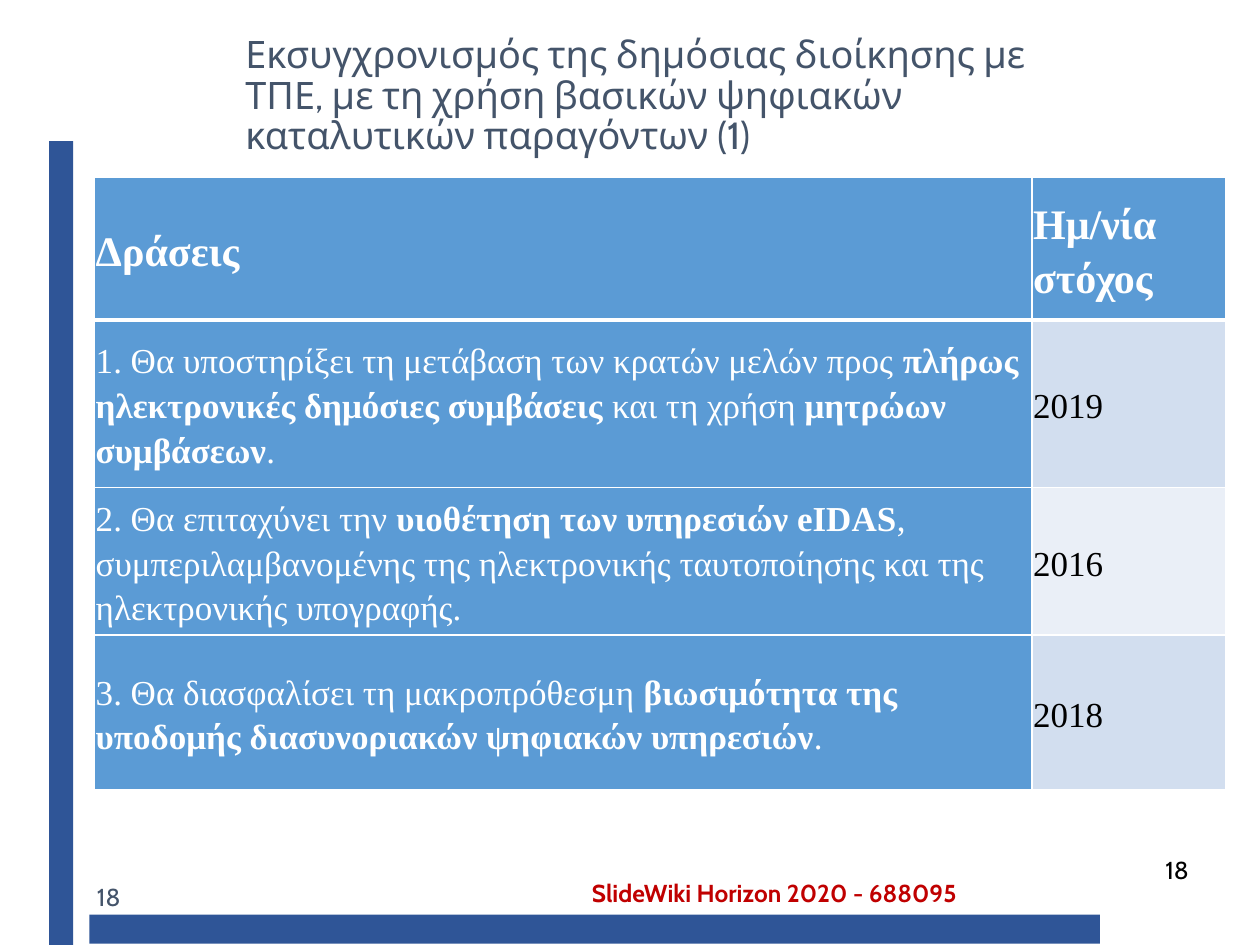
from lxml import etree
from pptx import Presentation
from pptx.dml.color import RGBColor
from pptx.enum.shapes import MSO_SHAPE
from pptx.enum.text import MSO_ANCHOR
from pptx.oxml.ns import qn
from pptx.util import Inches, Pt

NAVY = RGBColor(0x2F, 0x55, 0x97)
SLATE = RGBColor(0x44, 0x54, 0x6A)
RED = RGBColor(0xC0, 0x00, 0x00)
BLUE = RGBColor(0x5B, 0x9B, 0xD5)
BAND_DARK = RGBColor(0xD2, 0xDE, 0xEF)
BAND_LIGHT = RGBColor(0xEA, 0xEF, 0xF7)
WHITE = RGBColor(0xFF, 0xFF, 0xFF)
BLACK = RGBColor(0x00, 0x00, 0x00)


def add_label(slide, box, text, size, color, bold=False):
    label = slide.shapes.add_textbox(*[Inches(length) for length in box])
    label.text_frame.word_wrap = True
    label.text_frame.text = text
    font = label.text_frame.paragraphs[0].runs[0].font
    font.name, font.size, font.bold = "Cabin", Pt(size), bold
    font.color.rgb = color
    return label


def set_borders(cell, top, bottom):
    """Draw white borders: 1 pt at the sides, the given points above and below."""
    properties = cell._tc.get_or_add_tcPr()
    widths = {"a:lnL": 1, "a:lnR": 1, "a:lnT": top, "a:lnB": bottom}
    for position, (tag, width) in enumerate(widths.items()):
        line = etree.Element(qn(tag), w=str(Pt(width)))
        fill = etree.SubElement(line, qn("a:solidFill"))
        etree.SubElement(fill, qn("a:srgbClr"), val=str(WHITE))
        properties.insert(position, line)


prs = Presentation()
prs.slide_width, prs.slide_height = Inches(10), Inches(7.5)
slide = prs.slides.add_slide(prs.slide_layouts[6])

for box in [(0.39, 1.12, 0.19, 6.38), (0.71, 7.26, 8.02, 0.23)]:
    bar = slide.shapes.add_shape(MSO_SHAPE.RECTANGLE, *[Inches(length) for length in box])
    bar.shadow.inherit = False
    bar.fill.solid()
    bar.fill.fore_color.rgb = NAVY
    bar.line.fill.background()

add_label(slide, (4.6, 6.92, 3.64, 0.34), "SlideWiki Horizon 2020 - 688095", 14, RED, bold=True)
title = add_label(
    slide, (1.85, 0.21, 6.54, 1.12),
    "Εκσυγχρονισμός της δημόσιας διοίκησης με ΤΠΕ, με τη χρήση "
    "βασικών ψηφιακών καταλυτικών παραγόντων (1)", 21.6, SLATE)
title.text_frame.vertical_anchor = MSO_ANCHOR.MIDDLE
title.text_frame.paragraphs[0].line_spacing = 0.89
add_label(slide, (0.67, 6.95, 1.02, 0.4), "18", 14, SLATE)

# Each action alternates plain and bold pieces, starting with plain.
actions = [
    (["1. Θα υποστηρίξει τη μετάβαση των κρατών μελών προς ",
      "πλήρως ηλεκτρονικές δημόσιες συμβάσεις", " και τη χρήση ",
      "μητρώων συμβάσεων", "."], "2019"),
    (["2. Θα επιταχύνει την ", "υιοθέτηση των υπηρεσιών eIDAS",
      ", συμπεριλαμβανομένης της ηλεκτρονικής ταυτοποίησης και της "
      "ηλεκτρονικής υπογραφής."], "2016"),
    (["3. Θα διασφαλίσει τη μακροπρόθεσμη ",
      "βιωσιμότητα της υποδομής διασυνοριακών ψηφιακών υπηρεσιών", "."], "2018"),
]
rows = [(["Δράσεις"], ["Ημ/νία στόχος"])]
rows += [(pieces, [year]) for pieces, year in actions]
column_widths = [7.44, 1.54]
row_heights = [1.13, 1.33, 1.12, 1.23]

table = slide.shapes.add_table(
    len(rows), len(column_widths), Inches(0.75), Inches(1.41),
    Inches(sum(column_widths)), Inches(sum(row_heights))).table
for column, width in zip(table.columns, column_widths):
    column.width = Inches(width)

for row_index, (row, height) in enumerate(zip(rows, row_heights)):
    table.rows[row_index].height = Inches(height)
    is_header = row_index == 0
    for column_index, pieces in enumerate(row):
        cell = table.cell(row_index, column_index)
        cell.vertical_anchor = MSO_ANCHOR.MIDDLE
        cell.margin_left = cell.margin_right = Inches(0.01)
        cell.margin_top = cell.margin_bottom = Inches(0.01)
        is_blue = is_header or column_index == 0
        cell.fill.solid()
        cell.fill.fore_color.rgb = (
            BLUE if is_blue else BAND_DARK if row_index % 2 else BAND_LIGHT)
        set_borders(cell, top=3 if row_index == 1 else 1, bottom=3 if is_header else 1)

        paragraph = cell.text_frame.paragraphs[0]
        paragraph.line_spacing = 1.15
        paragraph.space_after = Pt(10)
        for piece_index, piece in enumerate(pieces):
            run = paragraph.add_run()
            run.text = piece
            run.font.name = "Times New Roman"
            run.font.size = Pt(24 if is_header else 20)
            run.font.bold = is_header or piece_index % 2 == 1
            run.font.color.rgb = WHITE if is_blue else BLACK

add_label(slide, (9.15, 6.74, 0.76, 0.44), "18", 14, BLACK)

prs.save("out.pptx")
